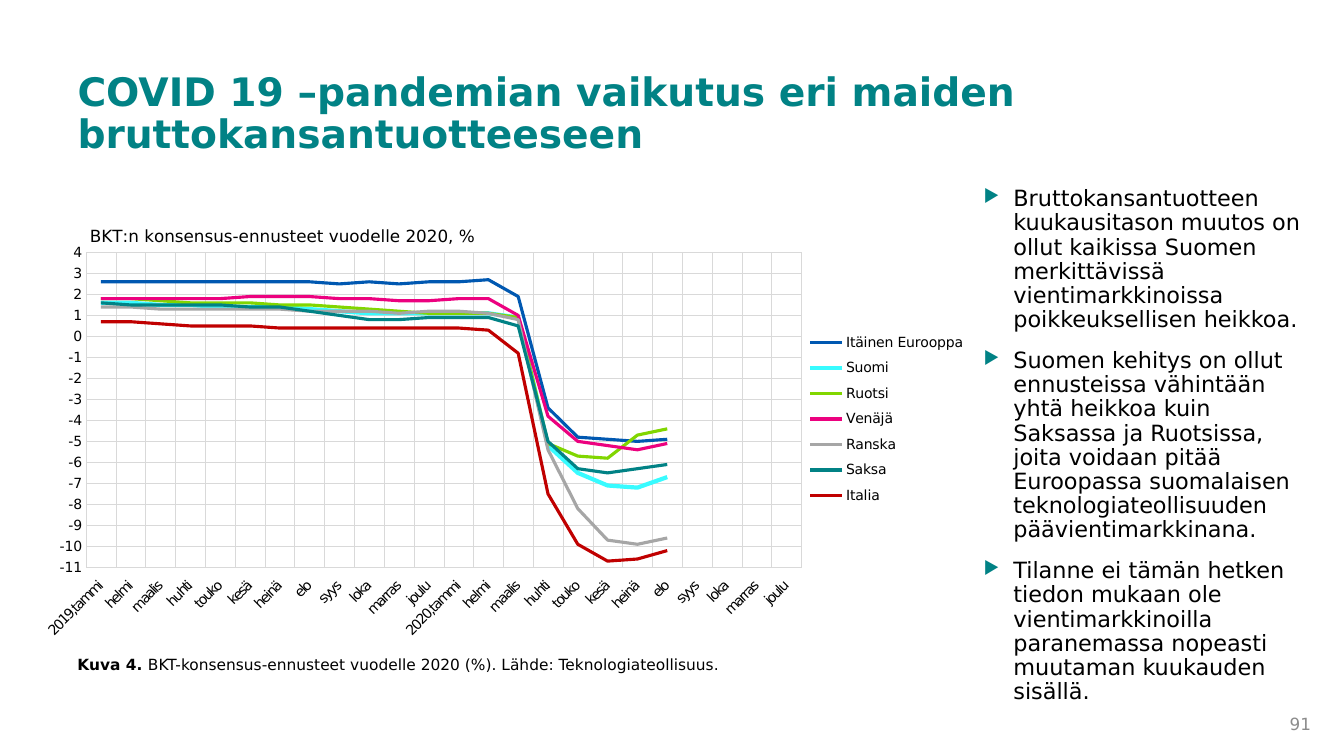
from dataclasses import dataclass

from lxml.etree import SubElement
from pptx import Presentation
from pptx.chart.data import CategoryChartData
from pptx.dml.color import RGBColor
from pptx.enum.chart import XL_CHART_TYPE as ChartType, XL_LEGEND_POSITION as LegendSide
from pptx.enum.chart import XL_TICK_LABEL_POSITION as LabelPlace, XL_TICK_MARK as Tick
from pptx.enum.dml import MSO_LINE_DASH_STYLE as Dash
from pptx.enum.text import MSO_ANCHOR as Anchor, MSO_AUTO_SIZE as AutoSize, PP_ALIGN as Align
from pptx.oxml import parse_xml
from pptx.oxml.ns import nsdecls, qn
from pptx.util import Cm, Pt


@dataclass(frozen=True)
class Theme:
    """Colours and type sizes of the slide."""
    font: str = "DejaVu Sans"
    teal: str = "018285"
    black: str = "000000"
    muted: str = "8C8C8C"
    grid: str = "D9D9D9"
    title: int = 28
    body: int = 16
    heading: int = 12
    caption: int = 11
    axis: int = 10


TITLE = "COVID 19 –pandemian vaikutus eri maiden bruttokansantuotteeseen"
BULLETS = [
    "Bruttokansantuotteen kuukausitason muutos on ollut kaikissa Suomen merkittävissä "
    "vientimarkkinoissa poikkeuksellisen heikkoa.",
    "Suomen kehitys on ollut ennusteissa vähintään yhtä heikkoa kuin Saksassa ja Ruotsissa, "
    "joita voidaan pitää Euroopassa suomalaisen teknologiateollisuuden päävientimarkkinana.",
    "Tilanne ei tämän hetken tiedon mukaan ole vientimarkkinoilla paranemassa nopeasti "
    "muutaman kuukauden sisällä.",
]
MONTHS = ["tammi", "helmi", "maalis", "huhti", "touko", "kesä",
          "heinä", "elo", "syys", "loka", "marras", "joulu"]
FORECASTS = [
    ("Itäinen Eurooppa", "0058B1", 2.25,
     [2.6, 2.6, 2.6, 2.6, 2.6, 2.6, 2.6, 2.6, 2.5, 2.6, 2.5, 2.6,
      2.6, 2.7, 1.9, -3.4, -4.8, -4.9, -5, -4.9]),
    ("Suomi", "38FBFF", 3,
     [1.6, 1.6, 1.5, 1.5, 1.4, 1.4, 1.4, 1.3, 1.2, 1.1, 1.1, 1.1,
      1.1, 1.1, 0.9, -5.2, -6.5, -7.1, -7.2, -6.7]),
    ("Ruotsi", "81D600", 2.25,
     [1.8, 1.8, 1.7, 1.6, 1.6, 1.6, 1.5, 1.5, 1.4, 1.3, 1.2, 1.1,
      1.1, 1.1, 0.9, -5.1, -5.7, -5.8, -4.7, -4.4]),
    ("Venäjä", "EC017F", 2.25,
     [1.8, 1.8, 1.8, 1.8, 1.8, 1.9, 1.9, 1.9, 1.8, 1.8, 1.7, 1.7,
      1.8, 1.8, 1, -3.8, -5, -5.2, -5.4, -5.1]),
    ("Ranska", "A6A6A6", 2.25,
     [1.4, 1.4, 1.3, 1.3, 1.3, 1.3, 1.3, 1.2, 1.2, 1.2, 1.1, 1.2,
      1.2, 1.1, 0.8, -5.4, -8.2, -9.7, -9.9, -9.6]),
    ("Saksa", "018285", 2.25,
     [1.6, 1.5, 1.5, 1.5, 1.5, 1.4, 1.4, 1.2, 1, 0.8, 0.8, 0.9,
      0.9, 0.9, 0.5, -5, -6.3, -6.5, -6.3, -6.1]),
    ("Italia", "C00000", 2.25,
     [0.7, 0.7, 0.6, 0.5, 0.5, 0.5, 0.4, 0.4, 0.4, 0.4, 0.4, 0.4,
      0.4, 0.3, -0.8, -7.5, -9.9, -10.7, -10.6, -10.2]),
]


def assign(target, values):
    """Set each attribute named in values."""
    for name, value in values.items():
        setattr(target, name, value)


def place(parent, index, **fractions):
    """Give a chart part a manual layout."""
    for old in parent.findall(qn("c:layout")):
        parent.remove(old)
    layout = parse_xml(f"<c:layout {nsdecls('c')}><c:manualLayout/></c:layout>")
    parent.insert(index, layout)
    for tag, value in fractions.items():
        SubElement(layout[0], qn(f"c:{tag}"), val=str(value))


class SlideBuilder:
    """Style and current slide, with one method per kind of element."""

    def __init__(self, slide, theme):
        """Keep the slide and its theme."""
        self.slide, self.theme = slide, theme

    def style(self, font, size, color=None, bold=False):
        """Format a font."""
        assign(font, {"name": self.theme.font, "size": Pt(size), "bold": bold})
        font.color.rgb = RGBColor.from_string(color or self.theme.black)

    def line(self, line, color, width):
        """Format a line."""
        line.color.rgb = RGBColor.from_string(color)
        line.width = Pt(width)

    def title(self, text, frame):
        """Move and format the title placeholder."""
        box = self.slide.shapes.title
        assign(box, dict(zip(("left", "top", "width", "height"), map(Cm, frame))))
        assign(box.text_frame, {"text": text, "word_wrap": True, "auto_size": AutoSize.NONE,
                                "vertical_anchor": Anchor.TOP})
        para = box.text_frame.paragraphs[0]
        assign(para, {"alignment": Align.LEFT, "line_spacing": 0.9})
        self.style(para.runs[0].font, self.theme.title, self.theme.teal, True)

    def text(self, frame, spans, size, color=None, align=Align.LEFT, anchor=Anchor.TOP):
        """Add a one-paragraph text box from (text, bold) spans."""
        box = self.slide.shapes.add_textbox(*map(Cm, frame))
        assign(box.text_frame, {"word_wrap": True, "vertical_anchor": anchor})
        para = box.text_frame.paragraphs[0]
        para.alignment = align
        for words, bold in spans:
            span = para.add_run()
            span.text = words
            self.style(span.font, size, color, bold)

    def bullets(self, frame, items):
        """Add a text box with arrow bullets."""
        box = self.slide.shapes.add_textbox(*map(Cm, frame))
        box.text_frame.word_wrap = True
        for number, item in enumerate(items):
            para = box.text_frame.add_paragraph() if number else box.text_frame.paragraphs[0]
            assign(para, {"line_spacing": 0.9, "space_before": Pt(12 if number else 0)})
            props = para._p.get_or_add_pPr()
            props.set("marL", str(Cm(0.75)))
            props.set("indent", str(Cm(-0.75)))
            color = SubElement(props, qn("a:buClr"))
            SubElement(color, qn("a:srgbClr"), val=self.theme.teal)
            SubElement(props, qn("a:buSzPct"), val="80000")
            SubElement(props, qn("a:buChar"), char="▶")
            span = para.add_run()
            span.text = item
            self.style(span.font, self.theme.body)

    def line_chart(self, frame, heading, categories, series_rows):
        """Add the forecast line chart."""
        theme = self.theme
        data = CategoryChartData()
        data.categories = categories
        for name, _, _, values in series_rows:
            data.add_series(name, values + [None] * (len(categories) - len(values)))
        chart = self.slide.shapes.add_chart(ChartType.LINE, *map(Cm, frame), data).chart
        self.style(chart.font, theme.axis)
        for series, (_, color, width, _) in zip(chart.plots[0].series, series_rows):
            series.smooth = False
            self.line(series.format.line, color, width)
        chart.plots[0].vary_by_categories = False

        months, percent = chart.category_axis, chart.value_axis
        for axis in (months, percent):
            assign(axis, {"has_major_gridlines": True, "major_tick_mark": Tick.NONE,
                          "minor_tick_mark": Tick.NONE})
            self.style(axis.tick_labels.font, theme.axis)
            self.line(axis.major_gridlines.format.line, theme.grid, 0.25)
        months.tick_label_position = LabelPlace.LOW
        self.line(months.format.line, theme.grid, 0.75)
        assign(percent, {"minimum_scale": -11, "maximum_scale": 4, "major_unit": 1})
        percent.major_gridlines.format.line.dash_style = Dash.ROUND_DOT
        percent.format.line.fill.background()

        chart.has_title = chart.has_legend = True
        chart.chart_title.text_frame.text = heading
        span = chart.chart_title.text_frame.paragraphs[0].runs[0]
        self.style(span.font, theme.heading)
        assign(chart.legend, {"position": LegendSide.RIGHT, "include_in_layout": False})
        self.style(chart.legend.font, theme.axis)

        root = chart.element
        root.xpath(".//c:catAx/c:txPr/a:bodyPr")[0].set("rot", str(-45 * 60000))
        root.xpath(".//c:catAx/c:txPr//a:defRPr")[0].set("spc", "-100")
        place(root.xpath(".//c:plotArea")[0], 0, layoutTarget="inner", xMode="edge",
              yMode="edge", x=0.052, y=0.077, w=0.764, h=0.744)
        place(root.xpath("./c:chart/c:title")[0], 1, xMode="edge", yMode="edge",
              x=0.053, y=0.005)
        place(root.xpath(".//c:legend")[0], 1, xMode="edge", yMode="edge",
              x=0.822, y=0.248, w=0.17, h=0.445)


def main():
    """Build and save the slide."""
    deck = Presentation()
    assign(deck, {"slide_width": Cm(33.87), "slide_height": Cm(19.05)})
    theme = Theme()
    page = SlideBuilder(deck.slides.add_slide(deck.slide_layouts[5]), theme)
    page.title(TITLE, (1.7, 1.7, 29.85, 3.07))
    page.bullets((24.54, 4.6, 8.76, 11.86), BULLETS)
    page.text((31.39, 17.88, 1.9, 0.71), [("91", False)], theme.heading, theme.muted,
              Align.RIGHT, Anchor.MIDDLE)
    categories = [f"{year},{month}" if month == MONTHS[0] else month
                  for year in (2019, 2020) for month in MONTHS]
    page.line_chart((0.94, 5.54, 23.6, 10.67), "BKT:n konsensus-ennusteet vuodelle 2020, %",
                    categories, FORECASTS)
    page.text((1.7, 16.38, 17.48, 0.74), [
        ("Kuva 4. ", True),
        ("BKT-konsensus-ennusteet vuodelle 2020 (%). Lähde: Teknologiateollisuus.", False),
    ], theme.caption)
    deck.save("out.pptx")


if __name__ == "__main__":
    main()
